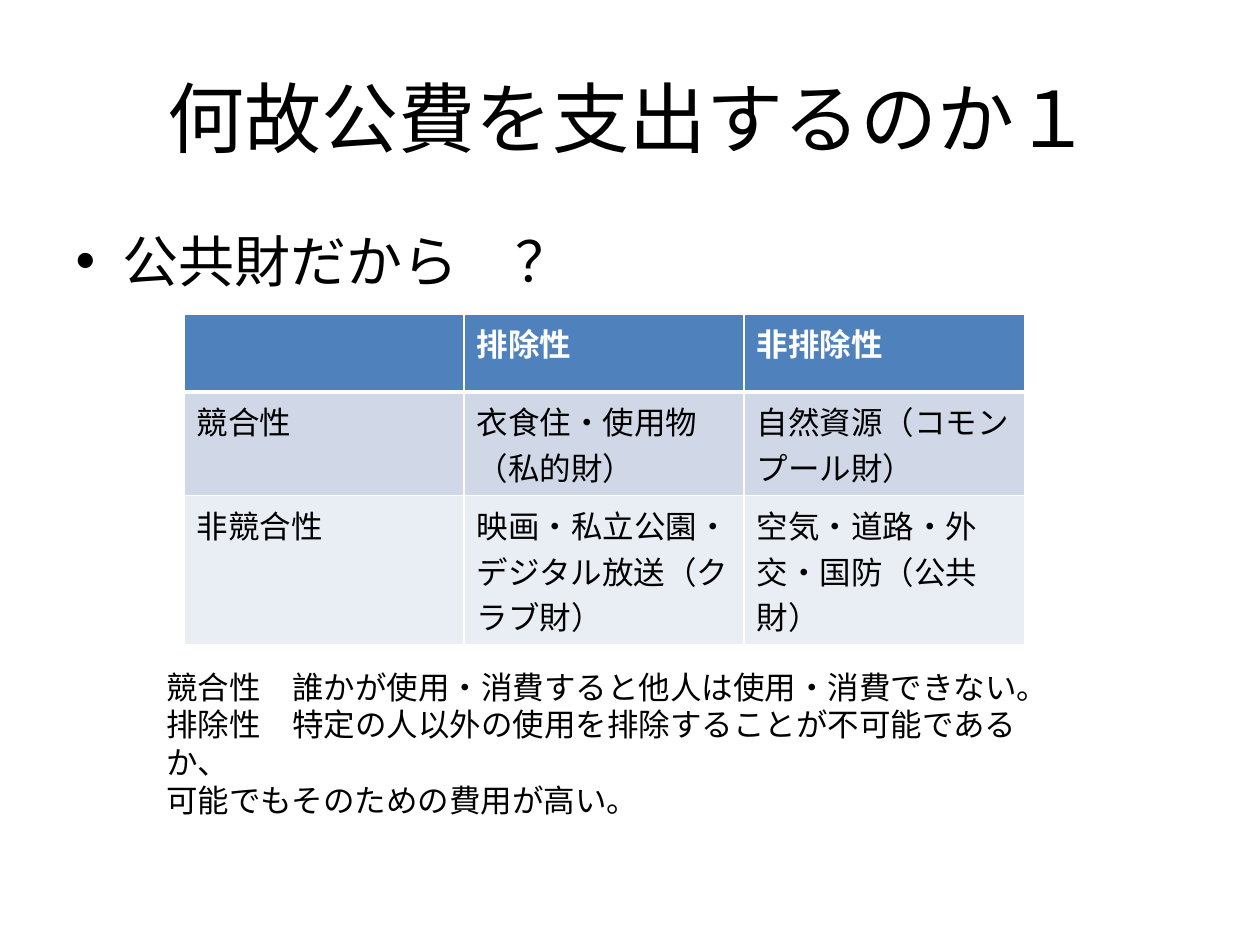
import pptx
import pptx.util
import pptx.oxml
import pptx.oxml.ns
from dataclasses import dataclass
from pptx.dml.color import RGBColor
from pptx.enum.text import MSO_ANCHOR, MSO_AUTO_SIZE, PP_ALIGN


@dataclass(frozen=True)
class Theme:
    font: str = "Calibri"
    text: str = "000000"
    white: str = "FFFFFF"
    header: str = "4F81BD"
    bands: tuple = ("D0D8E8", "E9EDF4")
    title_size: int = 44
    body_size: int = 32
    small_size: int = 18
    rule: int = 1
    header_rule: int = 3


THEME = Theme()
WIDTH, HEIGHT = pptx.util.Inches(10), pptx.util.Inches(7.5)

GOODS = [
    ["", "排除性", "非排除性"],
    ["競合性", "衣食住・使用物（私的財）", "自然資源（コモンプール財）"],
    ["非競合性", "映画・私立公園・デジタル放送（クラブ財）", "空気・道路・外交・国防（公共財）"],
]
ROW_HEIGHTS = [0.62, 0.72, 1.02]
DEFINITIONS = [
    "競合性　誰かが使用・消費すると他人は使用・消費できない。",
    "排除性　特定の人以外の使用を排除することが不可能であるか、",
    "可能でもそのための費用が高い。",
]


def share(x, y, w, h):
    """Turn percentages of the slide into left, top, width, height."""
    return [int(size * part / 100)
            for size, part in zip((WIDTH, HEIGHT) * 2, (x, y, w, h))]


def place(sp, box):
    sp.left, sp.top, sp.width, sp.height = box


def format_text(tf, size, color=THEME.text, bold=False):
    for p in tf.paragraphs:
        for r in p.runs:
            r.font.name = THEME.font
            r.font.size = pptx.util.Pt(size)
            r.font.bold = bold
            r.font.color.rgb = RGBColor.from_string(color)


def add_title(s, text):
    sp = s.shapes.title
    place(sp, share(5, 4, 90, 16.67))
    tf = sp.text_frame
    tf.text = text
    tf.vertical_anchor = MSO_ANCHOR.MIDDLE
    tf.paragraphs[0].alignment = PP_ALIGN.CENTER
    format_text(tf, THEME.title_size)


def add_body(s, text):
    sp = s.placeholders[1]
    place(sp, share(5, 23.33, 90, 66))
    sp.text_frame.text = text
    format_text(sp.text_frame, THEME.body_size)


def set_borders(cell, bottom):
    tcPr = cell._tc.get_or_add_tcPr()
    widths = {"lnL": THEME.rule, "lnR": THEME.rule, "lnT": THEME.rule, "lnB": bottom}
    for i, (tag, width) in enumerate(widths.items()):
        tcPr.insert(i, pptx.oxml.parse_xml(
            f'<a:{tag} {pptx.oxml.ns.nsdecls("a")} w="{pptx.util.Pt(width)}">'
            f'<a:solidFill><a:srgbClr val="{THEME.white}"/></a:solidFill></a:{tag}>'))


def add_goods_table(s):
    rows, cols = len(GOODS), len(GOODS[0])
    box = share(14.6, 33.2, 66.7, 31.47)
    table = s.shapes.add_table(rows, cols, *box).table
    for i, row in enumerate(GOODS):
        table.rows[i].height = pptx.util.Inches(ROW_HEIGHTS[i])
        header = i == 0
        fill = THEME.header if header else THEME.bands[(i - 1) % 2]
        for j, text in enumerate(row):
            cell = table.cell(i, j)
            cell.text = text
            cell.fill.solid()
            cell.fill.fore_color.rgb = RGBColor.from_string(fill)
            # the rule under the header is shared by both rows
            set_borders(cell, THEME.header_rule if header else THEME.rule)
            if i == 1:
                top = cell._tc.tcPr.find(pptx.oxml.ns.qn("a:lnT"))
                top.set("w", str(pptx.util.Pt(THEME.header_rule)))
            format_text(cell.text_frame, THEME.small_size,
                        THEME.white if header else THEME.text, header)


def add_definitions(s):
    tf = s.shapes.add_textbox(*share(12.2, 70, 70.9, 13.47)).text_frame
    tf.word_wrap = True
    tf.auto_size = MSO_AUTO_SIZE.SHAPE_TO_FIT_TEXT
    tf.text = "\n".join(DEFINITIONS)
    format_text(tf, THEME.small_size)


def main():
    prs = pptx.Presentation()
    prs.slide_width, prs.slide_height = WIDTH, HEIGHT
    s = prs.slides.add_slide(prs.slide_layouts[1])
    add_title(s, "何故公費を支出するのか１")
    add_body(s, "公共財だから　？")
    add_goods_table(s)
    add_definitions(s)
    prs.save("out.pptx")


if __name__ == "__main__":
    main()
